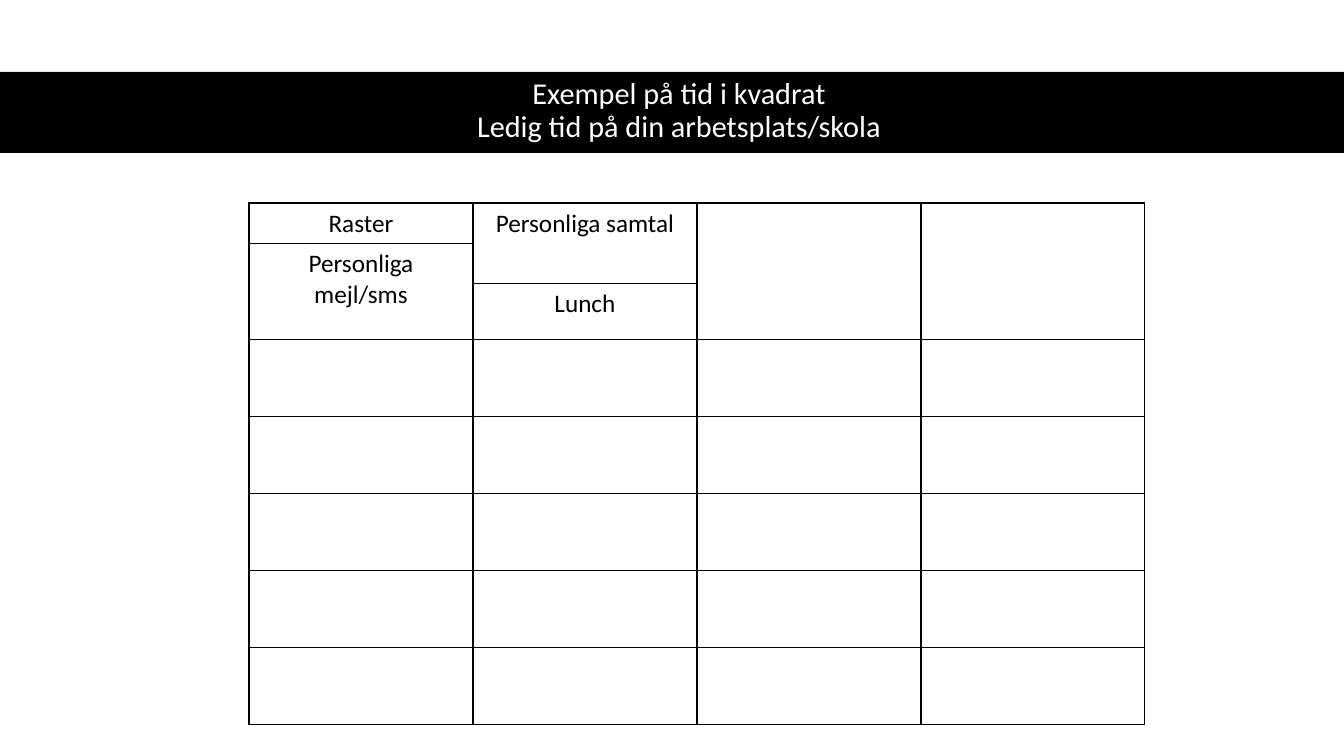
from dataclasses import dataclass

from lxml import etree
from pptx import Presentation
from pptx import util as u
from pptx.dml.color import RGBColor
from pptx.enum import shapes, text
from pptx.oxml import ns

EMU_PER_PX = 914400 / 100.8


def px(n):
    return u.Emu(round(n * EMU_PER_PX))


@dataclass(frozen=True)
class Theme:
    font: str = "Calibri"
    black: str = "000000"
    white: str = "FFFFFF"
    title_size: float = 21.6
    cell_size: float = 18
    border: float = 1


class SlideBuilder:
    def __init__(self, prs, theme):
        self.theme = theme
        self.slide = prs.slides.add_slide(prs.slide_layouts[6])

    def style(self, p, size, color):
        p.alignment = text.PP_ALIGN.CENTER
        p.font.name = self.theme.font
        p.font.size = u.Pt(size)
        p.font.color.rgb = RGBColor.from_string(color)

    def band(self, *box):
        sp = self.slide.shapes.add_shape(
            shapes.MSO_SHAPE.RECTANGLE, *map(px, box))
        sp.shadow.inherit = False
        sp.fill.solid()
        sp.fill.fore_color.rgb = RGBColor.from_string(self.theme.black)
        sp.line.fill.background()

    def title(self, lines, *box):
        tf = self.slide.shapes.add_textbox(*map(px, box)).text_frame
        tf.word_wrap = True
        tf.vertical_anchor = text.MSO_ANCHOR.MIDDLE
        p = tf.paragraphs[0]
        p.text = "\v".join(lines)
        p.line_spacing = 0.9
        self.style(p, self.theme.title_size, self.theme.white)

    def outline(self, cell):
        """Draw all four borders of a table cell."""
        tc_pr = cell._tc.get_or_add_tcPr()
        for i, side in enumerate("LRTB"):
            ln = etree.Element(ns.qn(f"a:ln{side}"),
                               w=str(u.Pt(self.theme.border)))
            fill = etree.SubElement(ln, ns.qn("a:solidFill"))
            etree.SubElement(fill, ns.qn("a:srgbClr"), val=self.theme.black)
            tc_pr.insert(i, ln)

    def table(self, left, top, col_width, cols, heights, labels, merges):
        table = self.slide.shapes.add_table(
            len(heights), cols, px(left), px(top),
            px(col_width * cols), px(sum(heights))).table
        table.first_row = table.horz_banding = False
        for col in table.columns:
            col.width = px(col_width)
        for row, height in zip(table.rows, heights):
            row.height = px(height)
        for (row, col), label in labels.items():
            table.cell(row, col).text = label
        for cell in table.iter_cells():
            cell.fill.background()
            self.outline(cell)
            self.style(cell.text_frame.paragraphs[0],
                       self.theme.cell_size, self.theme.black)
        for col, first, last in merges:
            table.cell(first, col).merge(table.cell(last, col))


def main():
    prs = Presentation()
    prs.slide_width, prs.slide_height = px(1344), px(756)
    s = SlideBuilder(prs, Theme())
    s.band(0, 72, 1344, 81)
    s.title(["Exempel på tid i kvadrat", "Ledig tid på din arbetsplats/skola"],
            61, 71, 1236, 81)
    s.table(249, 203, col_width=224, cols=4,
            heights=[40, 40, 56] + [77] * 5,
            labels={(0, 0): "Raster", (0, 1): "Personliga samtal",
                    (1, 0): "Personliga mejl/sms", (2, 1): "Lunch"},
            merges=[(0, 1, 2), (1, 0, 1), (2, 0, 2), (3, 0, 2)])
    prs.save("out.pptx")


if __name__ == "__main__":
    main()
